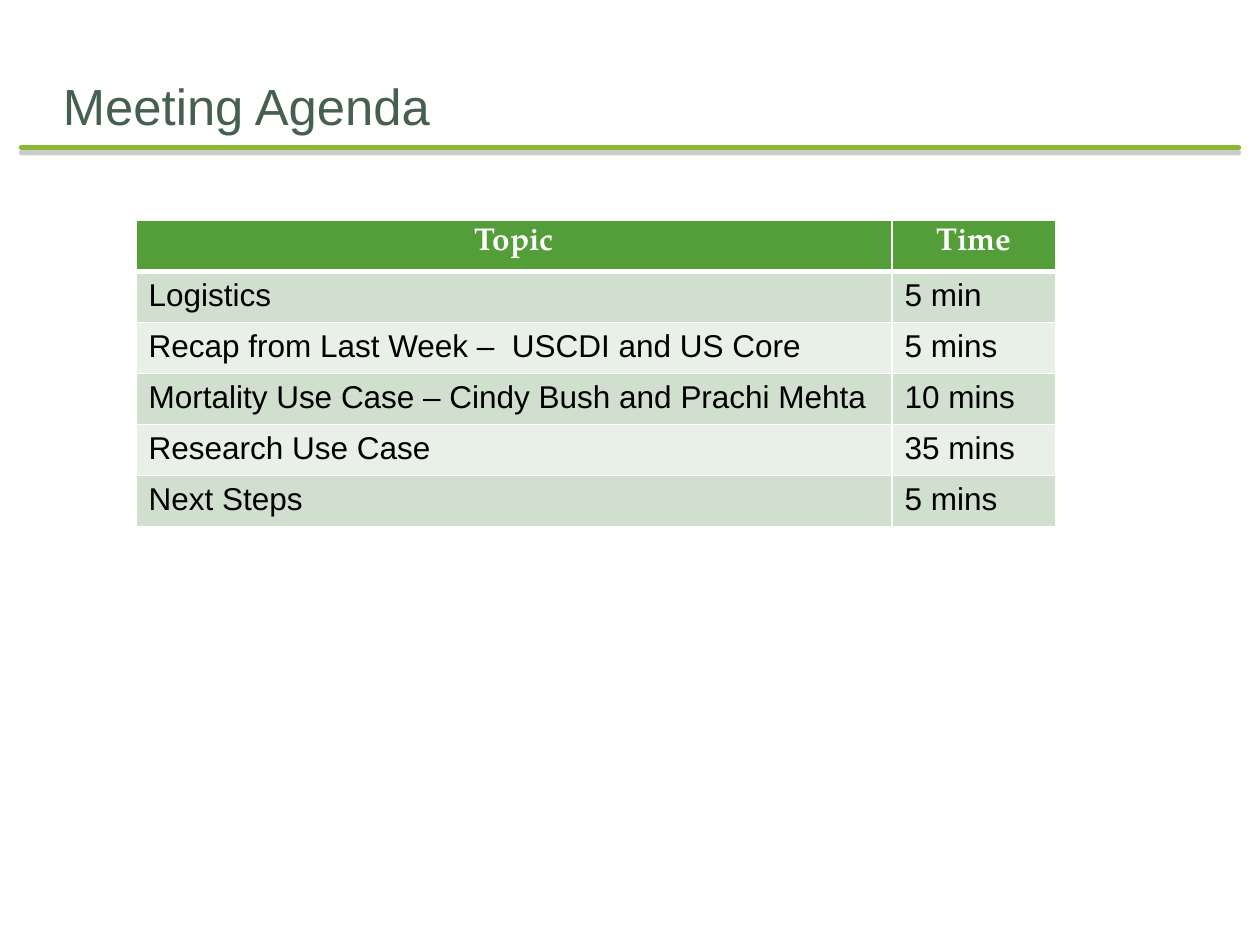
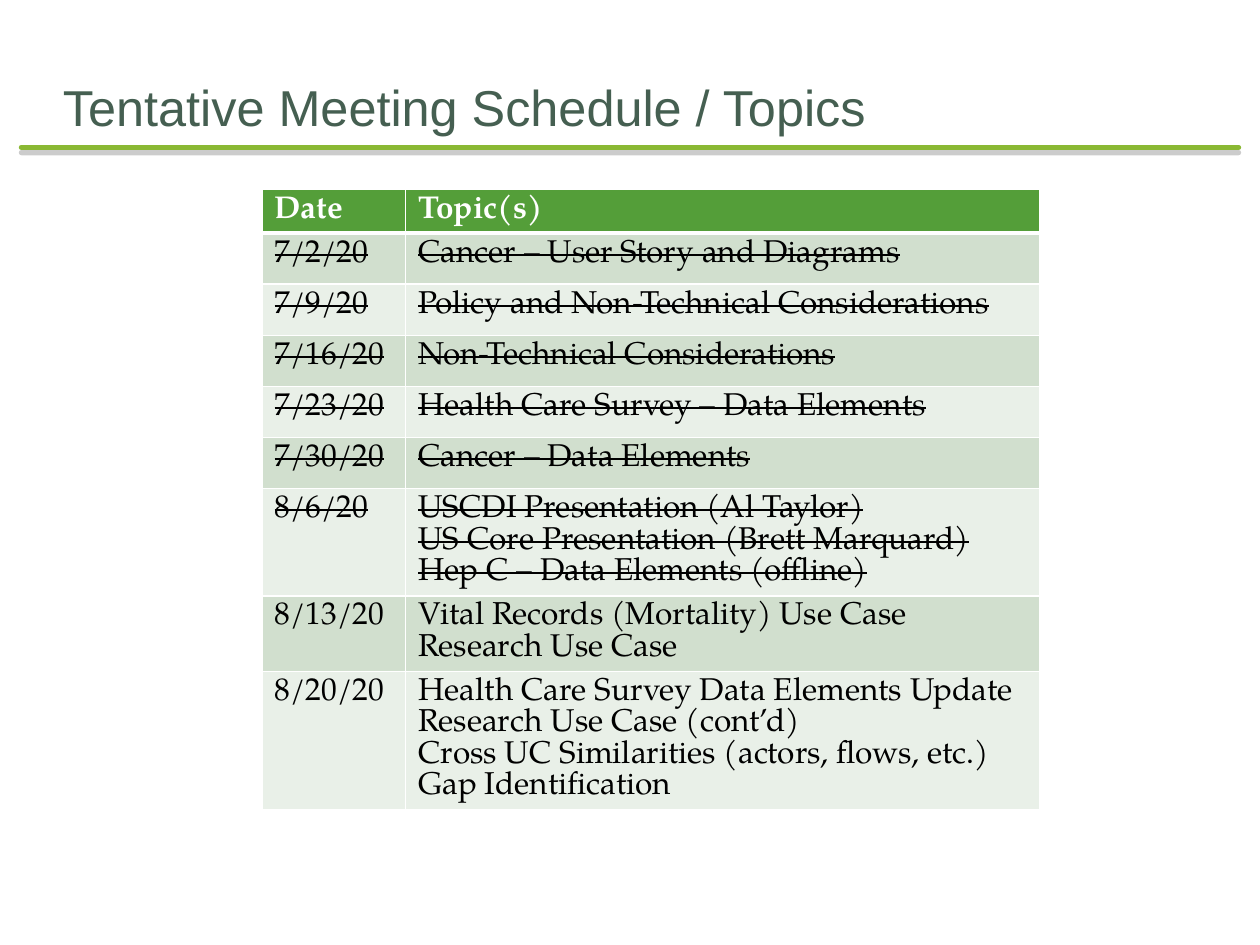
from dataclasses import dataclass

from lxml.etree import SubElement
from pptx import Presentation
from pptx.dml.color import RGBColor as Color
from pptx.enum.shapes import MSO_CONNECTOR as Connector
from pptx.enum.text import MSO_ANCHOR as Anchor, PP_ALIGN as Align
from pptx.oxml import parse_xml
from pptx.oxml.ns import nsdecls, qn
from pptx.util import Inches, Pt


@dataclass(frozen=True)
class Theme:
    title_color: str = "455F51"
    rule_color: str = "8AB833"
    shadow_color: str = "808080"
    header_fill: str = "549E39"
    band_fills: tuple = ("D1DFCE", "E9F0E8")
    border_color: str = "FFFFFF"
    header_text: str = "FFFFFF"
    body_text: str = "000000"
    sans: str = "Arial"
    serif: str = "TeX Gyre Pagella"
    title_size: float = 29
    long_title_size: float = 28.8
    table_size: float = 18
    thin: float = 1
    thick: float = 3


THEME = Theme()

AGENDA = [
    ("Topic", "Time"),
    ("Logistics", "5 min"),
    ("Recap from Last Week –  USCDI and US Core", "5 mins"),
    ("Mortality Use Case – Cindy Bush and Prachi Mehta", "10 mins"),
    ("Research Use Case", "35 mins"),
    ("Next Steps", "5 mins"),
]

SCHEDULE = [
    ("Date", "Topic(s)"),
    ("7/2/20", "Cancer – User Story and Diagrams"),
    ("7/9/20", "Policy and Non-Technical Considerations"),
    ("7/16/20", "Non-Technical Considerations"),
    ("7/23/20", "Health Care Survey – Data Elements"),
    ("7/30/20", "Cancer – Data Elements"),
    ("8/6/20", "USCDI Presentation (Al Taylor)\n"
               "US Core Presentation (Brett Marquard)\n"
               "Hep C – Data Elements (offline)"),
    ("8/13/20", "Vital Records (Mortality) Use Case\nResearch Use Case"),
    ("8/20/20", "Health Care Survey Data Elements Update\v"
                "Research Use Case (cont’d)\n"
                "Cross UC Similarities (actors, flows, etc.)\n"
                "Gap Identification"),
]
PAST_MEETINGS = 6


def apply_format(target, values):
    """Set each attribute of the target from a dict."""
    for name, value in values.items():
        setattr(target, name, value)


def format_run(run, color, **values):
    """Give a run its colour and font values."""
    apply_format(run.font, values)
    run.font.color.rgb = Color.from_string(color)


def add_title_rule(slide):
    """Draw the shadowed rule under the title."""
    rule = slide.shapes.add_connector(
        Connector.STRAIGHT, Inches(0.17), Inches(1.17), Inches(9.83), Inches(1.17))
    rule.line.color.rgb = Color.from_string(THEME.rule_color)
    rule.line.width = Pt(THEME.thick)
    properties = rule.line._get_or_add_ln()
    properties.set("cap", "rnd")
    effects = SubElement(properties.getparent(), qn("a:effectLst"))
    effects.append(parse_xml(
        f'<a:outerShdw {nsdecls("a")} dist="{Pt(3)}" dir="5400000" rotWithShape="0">'
        f'<a:srgbClr val="{THEME.shadow_color}"><a:alpha val="40000"/></a:srgbClr>'
        '</a:outerShdw>'))


def add_title(slide, text, size):
    """Place the slide title above the rule."""
    box = slide.shapes.add_textbox(Inches(0.5), Inches(0.5), Inches(9), Inches(0.58))
    frame = box.text_frame
    apply_format(frame, {
        "word_wrap": True, "vertical_anchor": Anchor.BOTTOM, "margin_left": 0,
        "margin_top": Inches(0.05), "margin_right": 0, "margin_bottom": 0})
    run = frame.paragraphs[0].add_run()
    run.text = text
    format_run(run, THEME.title_color, name=THEME.sans, size=Pt(size))


def set_borders(cell, top, bottom):
    """Outline a cell with the given top and bottom widths."""
    widths = {"lnL": THEME.thin, "lnR": THEME.thin, "lnT": top, "lnB": bottom}
    properties = cell._tc.get_or_add_tcPr()
    for index, (side, width) in enumerate(widths.items()):
        properties.insert(index, parse_xml(
            f'<a:{side} {nsdecls("a")} w="{Pt(width)}"><a:solidFill>'
            f'<a:srgbClr val="{THEME.border_color}"/></a:solidFill></a:{side}>'))


def fill_cell(cell, text, row, body_font, header_align, struck):
    """Write and style one cell according to its row."""
    is_header = row == 0
    font = THEME.serif if is_header else body_font
    cell.text = text
    cell.fill.solid()
    cell.fill.fore_color.rgb = Color.from_string(
        THEME.header_fill if is_header else THEME.band_fills[(row - 1) % 2])
    set_borders(cell, THEME.thick if row == 1 else THEME.thin,
                THEME.thick if is_header else THEME.thin)
    for paragraph in cell.text_frame.paragraphs:
        paragraph.alignment = header_align if is_header else Align.LEFT
        if font == THEME.serif:
            paragraph.line_spacing = Pt(THEME.table_size)
        for run in paragraph.runs:
            format_run(run, THEME.header_text if is_header else THEME.body_text,
                       name=font, size=Pt(THEME.table_size), bold=is_header)
            if struck:
                run._r.get_or_add_rPr().set("strike", "sngStrike")


def add_banded_table(slide, rows, left, top, widths, height, body_font,
                     header_align=Align.LEFT, struck_rows=0):
    """Add a table with a green header and banded rows."""
    table = slide.shapes.add_table(
        len(rows), len(widths), Inches(left), Inches(top),
        Inches(sum(widths)), Inches(height)).table
    apply_format(table, {"first_row": True, "horz_banding": False})
    for column, width in zip(table.columns, widths):
        column.width = Inches(width)
    for row, texts in enumerate(rows):
        for column, text in enumerate(texts):
            fill_cell(table.cell(row, column), text, row, body_font,
                      header_align, 1 <= row <= struck_rows)
    return table


def add_titled_slide(presentation, title, size):
    """Add a blank slide with the shared rule and title."""
    slide = presentation.slides.add_slide(presentation.slide_layouts[6])
    add_title_rule(slide)
    add_title(slide, title, size)
    return slide


def main():
    """Build and save both slides."""
    presentation = Presentation()
    apply_format(presentation, {"slide_width": Inches(10), "slide_height": Inches(7.5)})

    agenda = add_titled_slide(presentation, "Meeting Agenda", THEME.title_size)
    add_banded_table(agenda, AGENDA, 1.08, 1.75, (6, 1.3), 2.43, THEME.sans,
                     header_align=Align.CENTER)

    schedule = add_titled_slide(presentation, "Tentative Meeting Schedule / Topics",
                                THEME.long_title_size)
    table = add_banded_table(schedule, SCHEDULE, 2.08, 1.5, (1.14, 5.03), 3.65,
                             THEME.serif, struck_rows=PAST_MEETINGS)
    table.rows[0].height = Inches(0.16)

    presentation.save("out.pptx")


if __name__ == "__main__":
    main()
